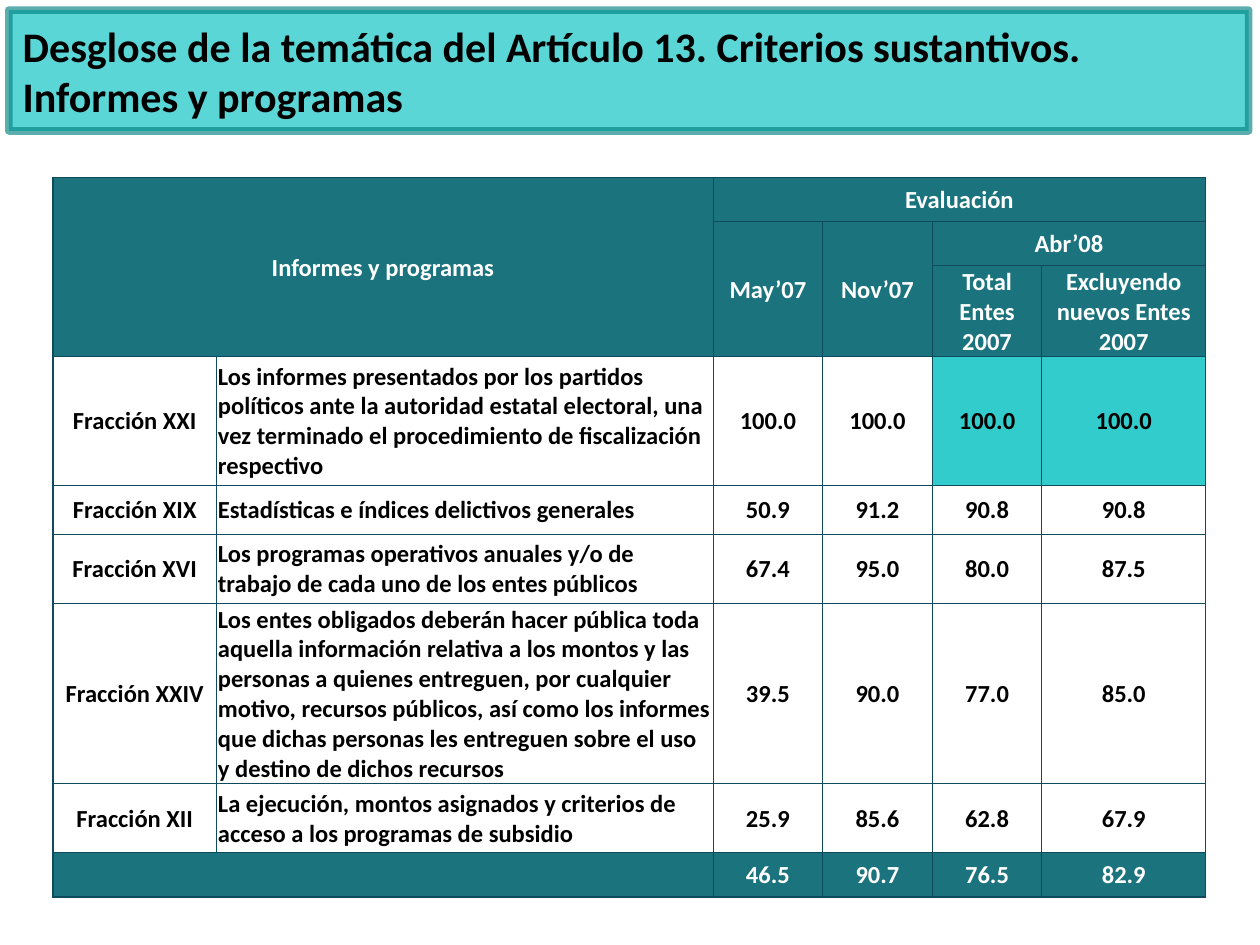
"""Build the slide on reports and programmes under Article 13."""
import dataclasses

import pptx
import pptx.dml.color
import pptx.enum.shapes
import pptx.enum.text
import pptx.oxml
import pptx.oxml.ns
import pptx.util

WIDTH, HEIGHT = pptx.util.Inches(10), pptx.util.Inches(7.5)
TEAL, AQUA, EDGE, BANNER_EDGE = "1B737D", "33CCCC", "0F4B5F", "008080"
WHITE, BLACK = "FFFFFF", "000000"
FONT = "Calibri"
COLUMNS = [13, 39.4, 8.7, 8.7, 8.7, 13]
ROWS = [4.67, 4.67, 6.53, 13.6, 5.2, 7.33, 18.93, 7.33, 4.67]
HEADER_ROWS = 3


@dataclasses.dataclass
class Area:
    """A rectangle in percentages of the slide's width and height."""
    left: float
    top: float
    width: float
    height: float

    def lengths(self) -> tuple[int, int, int, int]:
        """Return the rectangle as slide lengths."""
        return across(self.left), down(self.top), across(self.width), down(self.height)


@dataclasses.dataclass
class Heading:
    """A header cell with its place and span in the table grid."""
    text: str
    row: int
    column: int
    rows: int = 1
    columns: int = 1


@dataclasses.dataclass
class Fraction:
    """A legal fraction, its subject and its four evaluations."""
    name: str
    subject: str
    scores: list[str]
    highlighted: bool = False


HEADINGS = [
    Heading("Informes y programas", 0, 0, 3, 2),
    Heading("Evaluación", 0, 2, 1, 4),
    Heading("May’07", 1, 2, 2),
    Heading("Nov’07", 1, 3, 2),
    Heading("Abr’08", 1, 4, 1, 2),
    Heading("Total Entes 2007", 2, 4),
    Heading("Excluyendo nuevos Entes 2007", 2, 5),
]
FRACTIONS = [
    Fraction("Fracción XXI",
             "Los informes presentados por los partidos políticos ante la autoridad estatal "
             "electoral, una vez terminado el procedimiento de fiscalización respectivo",
             ["100.0", "100.0", "100.0", "100.0"], True),
    Fraction("Fracción XIX", "Estadísticas e índices delictivos generales",
             ["50.9", "91.2", "90.8", "90.8"]),
    Fraction("Fracción XVI",
             "Los programas operativos anuales y/o de trabajo de cada uno de los entes públicos",
             ["67.4", "95.0", "80.0", "87.5"]),
    Fraction("Fracción XXIV",
             "Los entes obligados deberán hacer pública toda aquella información relativa a los "
             "montos y las personas a quienes entreguen, por cualquier motivo, recursos públicos, "
             "así como los informes que dichas personas les entreguen sobre el uso y destino de "
             "dichos recursos",
             ["39.5", "90.0", "77.0", "85.0"]),
    Fraction("Fracción XII",
             "La ejecución, montos asignados y criterios de acceso a los programas de subsidio",
             ["25.9", "85.6", "62.8", "67.9"]),
]
AVERAGES = ["46.5", "90.7", "76.5", "82.9"]


def across(percent: float) -> int:
    """Return a share of the slide's width."""
    return round(WIDTH * percent / 100)


def down(percent: float) -> int:
    """Return a share of the slide's height."""
    return round(HEIGHT * percent / 100)


def rgb(code: str) -> pptx.dml.color.RGBColor:
    """Turn a hex string into a colour."""
    return pptx.dml.color.RGBColor.from_string(code)


def element(xml: str):
    """Parse one drawing element written without its namespace declaration."""
    tag, rest = xml.split(" ", 1)
    return pptx.oxml.parse_xml(f"{tag} {pptx.oxml.ns.nsdecls('a')} {rest}")


def write(frame, text: str, size: float, color: str, align: str = "CENTER") -> None:
    """Write one bold run into the first paragraph of a text frame."""
    paragraph = frame.paragraphs[0]
    paragraph.alignment = pptx.enum.text.PP_ALIGN[align]
    run = paragraph.add_run()
    run.text = text
    run.font.name, run.font.size, run.font.bold = FONT, pptx.util.Pt(size), True
    run.font.color.rgb = rgb(color)


def draw_banner(slide, area: Area):
    """Draw the translucent rectangle behind the title."""
    banner = slide.shapes.add_shape(pptx.enum.shapes.MSO_SHAPE.RECTANGLE, *area.lengths())
    banner.shadow.inherit = False
    banner.fill.solid()
    banner.fill.fore_color.rgb = rgb(AQUA)
    banner.line.color.rgb = rgb(BANNER_EDGE)
    banner.line.width = pptx.util.Pt(4.33)
    shades = banner.element.spPr.iter(pptx.oxml.ns.qn("a:srgbClr"))
    for shade, opacity in zip(list(shades), (80, 64)):
        shade.append(element(f'<a:alpha val="{opacity * 1000}"/>'))
    banner.element.spPr.find(pptx.oxml.ns.qn("a:ln")).append(element("<a:round />"))
    return banner


def draw_title(slide, area: Area, text: str) -> None:
    """Place the title placeholder in front of its banner."""
    title = slide.shapes.title
    title.left, title.top, title.width, title.height = area.lengths()
    frame = title.text_frame
    frame.word_wrap = True
    frame.auto_size = pptx.enum.text.MSO_AUTO_SIZE.NONE
    frame.vertical_anchor = pptx.enum.text.MSO_ANCHOR.MIDDLE
    write(frame, text, 24, BLACK, "LEFT")


def style_cell(cell, row: int, column: int) -> None:
    """Give a cell its margins, its borders and its fill."""
    cell.margin_left = cell.margin_right = cell.margin_top = pptx.util.Inches(0.01)
    cell.margin_bottom = 0
    cell.vertical_anchor = pptx.enum.text.MSO_ANCHOR.MIDDLE
    last_row, last_column = len(ROWS) - 1, len(COLUMNS) - 1
    outer = {"L": column == 0, "R": column == last_column, "T": row == 0, "B": row == last_row}
    properties = cell._tc.get_or_add_tcPr()
    for side, is_outer in outer.items():
        width = pptx.util.Pt(1 if is_outer else 0.5)
        properties.append(element(
            f'<a:ln{side} w="{width}"><a:solidFill><a:srgbClr val="{EDGE}"/></a:solidFill>'
            f'<a:prstDash val="solid"/></a:ln{side}>'))
    in_body = HEADER_ROWS <= row < last_row
    highlighted = in_body and FRACTIONS[row - HEADER_ROWS].highlighted and column >= 4
    if in_body and not highlighted:
        cell.fill.background()
    else:
        cell.fill.solid()
        cell.fill.fore_color.rgb = rgb(AQUA if highlighted else TEAL)


def draw_table(slide, left: float, top: float) -> None:
    """Draw the evaluation table with its headings, fractions and averages."""
    area = Area(left, top, sum(COLUMNS), sum(ROWS))
    table = slide.shapes.add_table(len(ROWS), len(COLUMNS), *area.lengths()).table
    table.first_row = table.horz_banding = False
    for column, share in zip(table.columns, COLUMNS):
        column.width = across(share)
    for row, share in zip(table.rows, ROWS):
        row.height = down(share)
    for row in range(len(ROWS)):
        for column in range(len(COLUMNS)):
            style_cell(table.cell(row, column), row, column)
    for heading in HEADINGS:
        cell = table.cell(heading.row, heading.column)
        if heading.rows * heading.columns > 1:
            cell.merge(table.cell(heading.row + heading.rows - 1,
                                  heading.column + heading.columns - 1))
        write(cell.text_frame, heading.text, 14, WHITE)
    for row, fraction in enumerate(FRACTIONS, HEADER_ROWS):
        for column, text in enumerate([fraction.name, fraction.subject, *fraction.scores]):
            align = "LEFT" if column == 1 else "CENTER"
            write(table.cell(row, column).text_frame, text, 14, BLACK, align)
    last_row = len(ROWS) - 1
    table.cell(last_row, 0).merge(table.cell(last_row, 1))
    for column, average in enumerate(AVERAGES, 2):
        write(table.cell(last_row, column).text_frame, average, 14, WHITE)


def main() -> None:
    """Assemble the slide and save it."""
    deck = pptx.Presentation()
    deck.slide_width, deck.slide_height = WIDTH, HEIGHT
    slide = deck.slides.add_slide(deck.slide_layouts.get_by_name("Title Only"))
    banner = draw_banner(slide, Area(0.7, 1.07, 98.4, 12.8))
    slide.shapes.title.element.addprevious(banner.element)
    draw_title(slide, Area(0.8, 1.2, 91.7, 12.53),
               "Desglose de la temática del Artículo 13. Criterios sustantivos. "
               "Informes y programas")
    draw_table(slide, 4.2, 18.8)
    deck.save("out.pptx")


if __name__ == "__main__":
    main()
